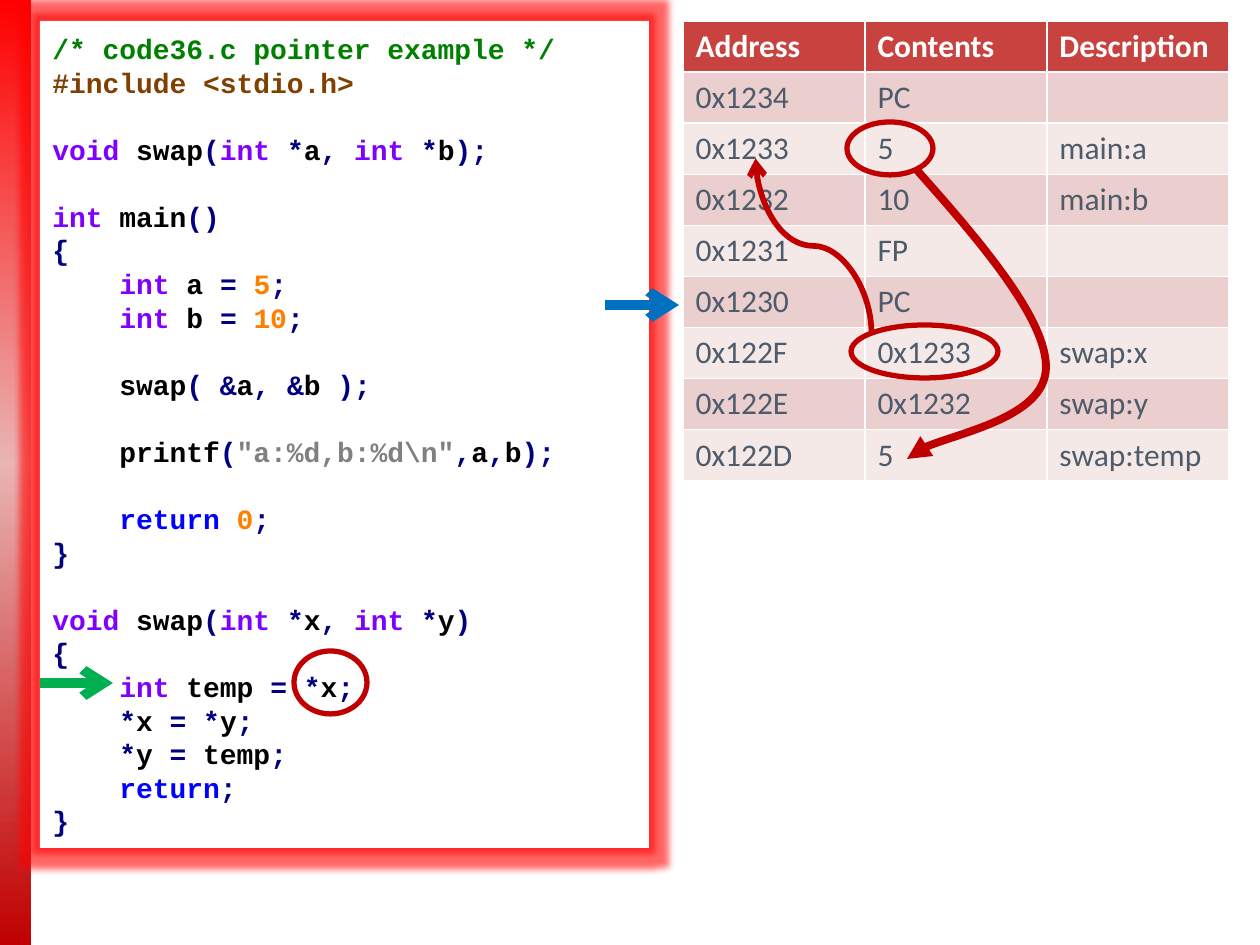
from itertools import groupby
from lxml.etree import SubElement
from pptx import Presentation
from pptx.dml.color import RGBColor
from pptx.enum.shapes import MSO_CONNECTOR, MSO_SHAPE
from pptx.enum.text import MSO_ANCHOR, PP_ALIGN
from pptx.oxml.ns import qn
from pptx.util import Emu, Pt

UNIT = 914400 / 126
RED = "C00000"
HEADS = ["/* code36.c pointer example */", "#include <stdio.h>"]
CODE = """/* code36.c pointer example */
#include <stdio.h>

void swap(int *a, int *b);

int main()
{
    int a = 5;
    int b = 10;

    swap( &a, &b );

    printf("a:%d,b:%d\\n",a,b);

    return 0;
}

void swap(int *x, int *y)
{
    int temp = *x;
    *x = *y;
    *y = temp;
    return;
}"""
WHOLE = {"/": "008000", "#": "804000"}
WORDS = {"void": "8000FF", "int": "8000FF", "return": "0000FF"}
ROWS = [
    ("Address", "Contents", "Description"),
    ("0x1234", "PC", ""),
    ("0x1233", "5", "main:a"),
    ("0x1232", "10", "main:b"),
    ("0x1231", "FP", ""),
    ("0x1230", "PC", ""),
    ("0x122F", "0x1233", "swap:x"),
    ("0x122E", "0x1232", "swap:y"),
    ("0x122D", "5", "swap:temp"),
]
RINGS = [(294, 651, 73, 63), (851, 325, 147, 53), (847, 122, 86, 53)]
STEPS = [(40, 683, 113, "00B050"), (605, 305, 679, "0070C0")]
BEND = [(915, 168), (982, 243), (1047, 320), (1046, 368),
        (1045, 417), (902, 447), (907, 459)]
STOPS = [(0, "FF0000"), (49, "E9B4B3"), (100, RED)]


def px(*nums):
    return [Emu(round(n * UNIT)) for n in nums]


def rgb(text):
    return RGBColor.from_string(text)


def tag(node, name, **attrs):
    return SubElement(node, qn(name), {k: str(v) for k, v in attrs.items()})


def ink(font, name, size, color, bold):
    font.name, font.size, font.bold = name, Pt(size), bold
    font.color.rgb = rgb(color)


def stroke(shape, color, width, tip=None):
    shape.line.color.rgb = rgb(color)
    shape.line.width = Pt(width)
    if tip:
        tag(shape.element.spPr.find(qn("a:ln")), "a:tailEnd", type=tip)


def link(kind, ends, color, width):
    line = slide.shapes.add_connector(kind, *px(*ends))
    stroke(line, color, width, "arrow")
    tag(line.element.spPr, "a:effectLst")
    return line


def kind(char):
    return "word" if char.isalnum() else "gap" if char.isspace() else "sign"


def tokens(line):
    if line[0] in WHOLE:
        yield line, WHOLE[line[0]]
        return
    for i, part in enumerate(line.split('"')):
        if i % 2:
            yield f'"{part}"', "808080"
            continue
        for sort, chars in groupby(part, kind):
            word = "".join(chars)
            if sort == "sign":
                yield word, "000080"
            elif word.isdigit():
                yield word, "FF8000"
            else:
                yield word, WORDS.get(word, "000000")


deck = Presentation()
deck.slide_width, deck.slide_height = px(1260, 945)
slide = deck.slides.add_slide(deck.slide_layouts[6])

bar = slide.shapes.add_shape(MSO_SHAPE.RECTANGLE, *px(0, 0, 31, 945))
bar.shadow.inherit = False
bar.line.fill.background()
bar.fill.gradient()
bar.fill.gradient_angle = 270
stops = bar.element.spPr.find(qn("a:gradFill")).find(qn("a:gsLst"))
stops.clear()
for pos, color in STOPS:
    tag(tag(stops, "a:gs", pos=pos * 1000), "a:srgbClr", val=color)

box = slide.shapes.add_shape(MSO_SHAPE.RECTANGLE, *px(40, 21, 609, 827))
box.fill.solid()
box.fill.fore_color.rgb = rgb("FFFFFF")
box.line.fill.background()
glow = tag(tag(box.element.spPr, "a:effectLst"), "a:glow", rad=px(14)[0])
tag(tag(glow, "a:srgbClr", val="FF0000"), "a:alpha", val=60000)

frame = box.text_frame
frame.word_wrap = True
frame.vertical_anchor = MSO_ANCHOR.MIDDLE
para, gap = frame.paragraphs[0], 0
for line in CODE.split("\n"):
    if not line:
        gap = 19.2
        continue
    if para is None:
        para = frame.add_paragraph()
    para.alignment = PP_ALIGN.LEFT
    para.line_spacing = Pt(19.2)
    para.space_before = Pt(gap)
    if line.startswith(" "):
        para._p.get_or_add_pPr().set("marL", str(px(67)[0]))
    for color, group in groupby(tokens(line.strip()), lambda t: t[1]):
        run = para.add_run()
        run.text = "".join(word for word, _ in group)
        ink(run.font, "Courier New", 16, color, True)
    para, gap = None, 0

grid = slide.shapes.add_table(len(ROWS), 3, *px(683, 21, 546, 460)).table
for r, row in enumerate(ROWS):
    for c, text in enumerate(row):
        cell = grid.cell(r, c)
        cell.fill.solid()
        fill = ("F5E9E8", "EBCFCF")[r % 2] if r else "C84340"
        cell.fill.fore_color.rgb = rgb(fill)
        if text:
            run = cell.text_frame.paragraphs[0].add_run()
            run.text = text
            ink(run.font, "Calibri", 18, "4D5B6B" if r else "FFFFFF", r == 0)

for spot in RINGS:
    ring = slide.shapes.add_shape(MSO_SHAPE.OVAL, *px(*spot))
    ring.shadow.inherit = False
    ring.fill.background()
    stroke(ring, RED, 3)

for left, top, right, color in STEPS:
    link(MSO_CONNECTOR.STRAIGHT, (left, top, right, top), color, 5.5)

wave = link(MSO_CONNECTOR.CURVE, (726, 188, 901, 304), RED, 3.25)
turn = wave.element.spPr.find(qn("a:xfrm"))
turn.set("rot", str(270 * 60000))
turn.set("flipV", "1")

pen = slide.shapes.build_freeform(*BEND[0], scale=UNIT)
pen.add_line_segments(BEND[1:], close=False)
arc = pen.convert_to_shape()
arc.shadow.inherit = False
arc.fill.background()
stroke(arc, RED, 4.5, "triangle")
track = next(arc.element.iter(qn("a:path")))
legs = track.findall(qn("a:lnTo"))
for i in range(0, len(legs), 3):
    curve = tag(track, "a:cubicBezTo")
    for leg in legs[i:i + 3]:
        curve.append(leg[0])
        track.remove(leg)

deck.save("out.pptx")
